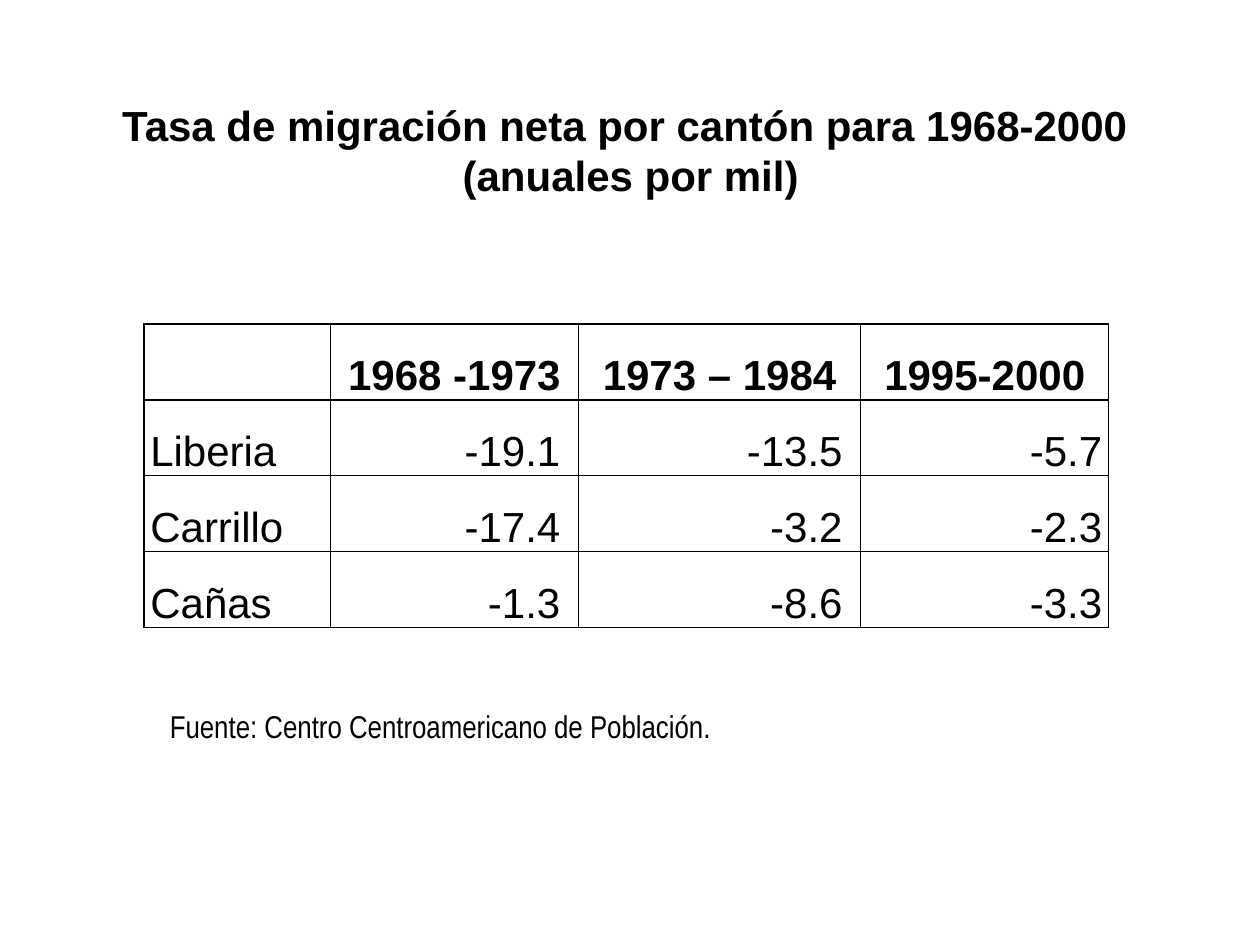
import pptx
import pptx.util
import pptx.dml.color
import pptx.enum.text
import pptx.oxml
import pptx.oxml.ns
from pptx.util import Cm

ALIGN = pptx.enum.text.PP_ALIGN
ANCHOR = pptx.enum.text.MSO_ANCHOR

# Content
title = ["Tasa de migración neta por cantón para 1968-2000 ", "(anuales por mil)"]
periods = ["", "1968 -1973", "1973 – 1984", "1995-2000"]
cantons = [
    ["Liberia ", "-19.1 ", "-13.5 ", "-5.7"],
    ["Carrillo", "-17.4 ", "-3.2 ", "-2.3"],
    ["Cañas ", "-1.3 ", "-8.6 ", "-3.3"],
]
source = ["Fuente: Centro Centroamericano de Población."]

# Theme and layout
theme = {"ink": "000000", "font": "Arial", "narrow": "Arial Narrow", "main": 24, "note": 18, "rule": 1}
column_widths = [Cm(3.76), Cm(5), Cm(5.69), Cm(5)]
row_height = Cm(1.53)


def write(frame, lines, size=theme["main"], font=theme["font"], bold=False, align=ALIGN.CENTER):
    for number, line in enumerate(lines):
        paragraph = frame.add_paragraph() if number else frame.paragraphs[0]
        paragraph.alignment = align
        run = paragraph.add_run()
        run.text = line
        run.font.size = pptx.util.Pt(size)
        run.font.name = font
        run.font.bold = bold
        run.font.color.rgb = pptx.dml.color.RGBColor.from_string(theme["ink"])


def add_label(slide, lines, left, top, width, height, **style):
    frame = slide.shapes.add_textbox(left, top, width, height).text_frame
    frame.word_wrap = False
    write(frame, lines, **style)


def rule_cell(cell):
    properties = cell._tc.get_or_add_tcPr()
    for position, side in enumerate(("lnL", "lnR", "lnT", "lnB")):
        border = pptx.oxml.parse_xml(
            f'<a:{side} {pptx.oxml.ns.nsdecls("a")} w="{pptx.util.Pt(theme["rule"])}">'
            f'<a:solidFill><a:srgbClr val="{theme["ink"]}"/></a:solidFill></a:{side}>')
        properties.insert(position, border)


def add_rates(slide):
    rows = [periods] + cantons
    table = slide.shapes.add_table(
        len(rows), len(periods), Cm(2.9), Cm(6.53),
        sum(column_widths), row_height * len(rows)).table
    table.first_row = table.horz_banding = False
    for column, width in zip(table.columns, column_widths):
        column.width = width
    for row_number, row in enumerate(rows):
        table.rows[row_number].height = row_height
        for column_number, entry in enumerate(row):
            cell = table.cell(row_number, column_number)
            cell.fill.background()
            cell.vertical_anchor = ANCHOR.BOTTOM
            cell.margin_left = cell.margin_right = Cm(0.13)
            cell.margin_top = cell.margin_bottom = 0
            rule_cell(cell)
            header = row_number == 0
            align = ALIGN.CENTER if header else ALIGN.RIGHT if column_number else ALIGN.JUSTIFY
            if entry:
                write(cell.text_frame, [entry], bold=header, align=align)


def main():
    deck = pptx.Presentation()
    deck.slide_width, deck.slide_height = Cm(25.4), Cm(19.05)
    slide = deck.slides.add_slide(deck.slide_layouts[6])
    # Rates by canton
    add_rates(slide)
    # Title and source
    add_label(slide, title, Cm(2.11), Cm(1.88), Cm(21.21), Cm(3.33), bold=True)
    add_label(slide, source, Cm(3.1), Cm(14.12), Cm(11.56), Cm(1.02),
              size=theme["note"], font=theme["narrow"])
    deck.save("out.pptx")


if __name__ == "__main__":
    main()
